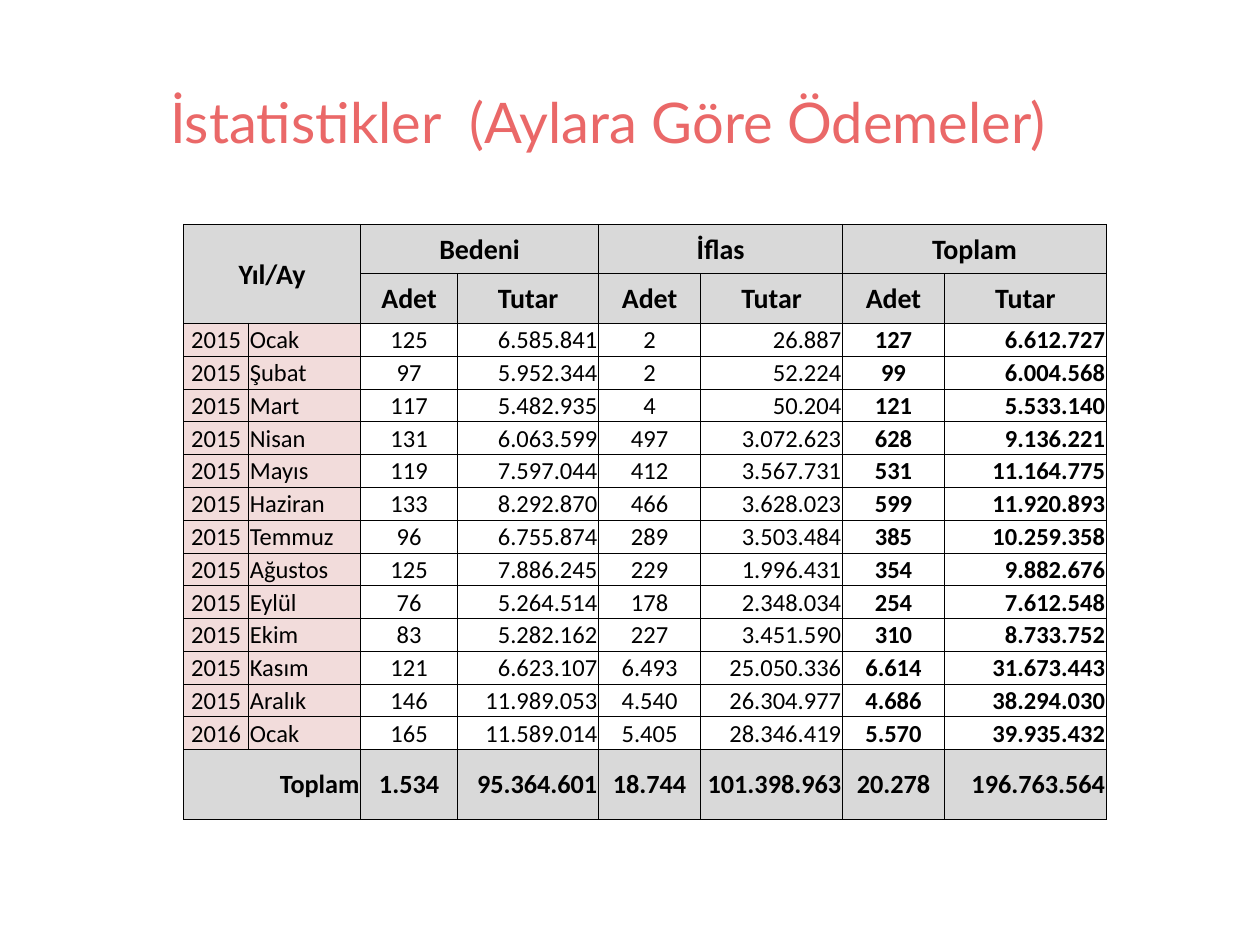
import lxml.etree
import pptx
import pptx.dml.color
import pptx.enum.text
import pptx.oxml.ns
import pptx.util

Pt = pptx.util.Pt
RGBColor = pptx.dml.color.RGBColor
ALIGN = pptx.enum.text.PP_ALIGN
MIDDLE = pptx.enum.text.MSO_ANCHOR.MIDDLE
qn = pptx.oxml.ns.qn

CORAL = RGBColor(0xEA, 0x68, 0x68)
BLACK = RGBColor(0, 0, 0)
GREY = RGBColor(0xD9, 0xD9, 0xD9)
PINK = RGBColor(0xF2, 0xDC, 0xDB)

HEADER = [
    ["Yıl/Ay", "", "Bedeni", "", "İflas", "", "Toplam", ""],
    ["", ""] + ["Adet", "Tutar"] * 3,
]
MONTHS = [
    ["2015", "Ocak", "125", "6.585.841", "2", "26.887", "127", "6.612.727"],
    ["2015", "Şubat", "97", "5.952.344", "2", "52.224", "99", "6.004.568"],
    ["2015", "Mart", "117", "5.482.935", "4", "50.204", "121", "5.533.140"],
    ["2015", "Nisan", "131", "6.063.599", "497", "3.072.623", "628", "9.136.221"],
    ["2015", "Mayıs", "119", "7.597.044", "412", "3.567.731", "531", "11.164.775"],
    ["2015", "Haziran", "133", "8.292.870", "466", "3.628.023", "599", "11.920.893"],
    ["2015", "Temmuz", "96", "6.755.874", "289", "3.503.484", "385", "10.259.358"],
    ["2015", "Ağustos", "125", "7.886.245", "229", "1.996.431", "354", "9.882.676"],
    ["2015", "Eylül", "76", "5.264.514", "178", "2.348.034", "254", "7.612.548"],
    ["2015", "Ekim", "83", "5.282.162", "227", "3.451.590", "310", "8.733.752"],
    ["2015", "Kasım", "121", "6.623.107", "6.493", "25.050.336", "6.614", "31.673.443"],
    ["2015", "Aralık", "146", "11.989.053", "4.540", "26.304.977", "4.686", "38.294.030"],
    ["2016", "Ocak", "165", "11.589.014", "5.405", "28.346.419", "5.570", "39.935.432"],
]
TOTAL = ["Toplam", "", "1.534", "95.364.601", "18.744", "101.398.963", "20.278", "196.763.564"]

ROWS = HEADER + MONTHS + [TOTAL]
COL_WIDTHS = [37.2, 64, 55.4, 80.6, 58.3, 81.1, 58.3, 92.5]
ROW_HEIGHTS = [28.3] * len(HEADER) + [18.75] * len(MONTHS) + [39.8]
COL_ALIGN = [ALIGN.CENTER, ALIGN.LEFT] + [ALIGN.CENTER, ALIGN.RIGHT] * 3


def add_borders(cell):
    tcPr = cell._tc.get_or_add_tcPr()
    for side in ("a:lnL", "a:lnR", "a:lnT", "a:lnB"):
        ln = lxml.etree.SubElement(tcPr, qn(side), w=str(Pt(0.5)))
        fill = lxml.etree.SubElement(ln, qn("a:solidFill"))
        lxml.etree.SubElement(fill, qn("a:srgbClr"), val=str(BLACK))


prs = pptx.Presentation()
prs.slide_width, prs.slide_height = Pt(720), Pt(540)
s = prs.slides.add_slide(prs.slide_layouts[5])

# Title
title = s.shapes.title
title.left, title.top, title.width, title.height = Pt(90), Pt(46), Pt(594), Pt(46)
tf = title.text_frame
tf.text = "İstatistikler  (Aylara Göre Ödemeler)"
tf.vertical_anchor = MIDDLE
p = tf.paragraphs[0]
p.alignment = ALIGN.LEFT
p.font.name = "Lato"
p.font.size = Pt(32)
p.font.color.rgb = CORAL

# Payments table: grid
table = s.shapes.add_table(
    len(ROWS), len(COL_WIDTHS), Pt(104.9), Pt(128.2),
    Pt(sum(COL_WIDTHS)), Pt(sum(ROW_HEIGHTS)),
).table
table.first_row = table.horz_banding = False
for column, width in zip(table.columns, COL_WIDTHS):
    column.width = Pt(width)
for row, height in zip(table.rows, ROW_HEIGHTS):
    row.height = Pt(height)

# Merged headings and total label
last = len(ROWS) - 1
table.cell(0, 0).merge(table.cell(1, 1))
for c in (2, 4, 6):
    table.cell(0, c).merge(table.cell(0, c + 1))
table.cell(last, 0).merge(table.cell(last, 1))

# Cell text and formatting
for r, values in enumerate(ROWS):
    is_header, is_total = r < len(HEADER), r == last
    for c, value in enumerate(values):
        cell = table.cell(r, c)
        add_borders(cell)
        if is_header or is_total:
            cell.fill.solid()
            cell.fill.fore_color.rgb = GREY
        elif c < 2:
            cell.fill.solid()
            cell.fill.fore_color.rgb = PINK
        else:
            cell.fill.background()
        cell.vertical_anchor = MIDDLE
        cell.margin_left = cell.margin_right = cell.margin_top = Pt(0.7)
        cell.margin_bottom = Pt(0)
        if cell.is_spanned:
            continue
        cell.text = value
        p = cell.text_frame.paragraphs[0]
        if is_header:
            p.alignment = ALIGN.CENTER
        elif is_total and c == 0:
            p.alignment = ALIGN.RIGHT
        else:
            p.alignment = COL_ALIGN[c]
        p.font.name = "Calibri"
        p.font.size = Pt(16 if is_header else 15 if is_total else 14)
        p.font.bold = is_header or is_total or c >= 6
        p.font.color.rgb = BLACK

prs.save("out.pptx")
